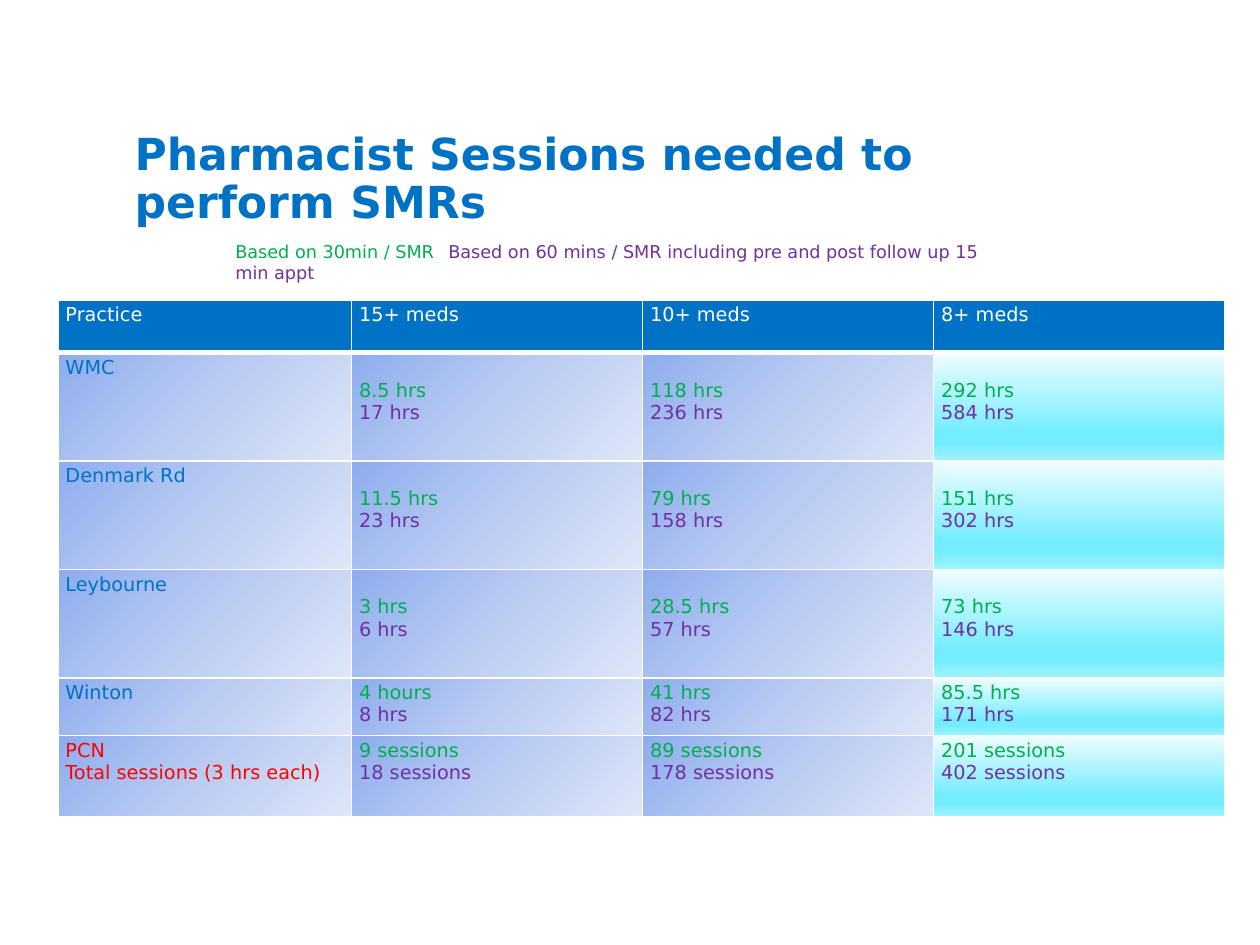
from dataclasses import dataclass

from lxml.etree import SubElement as add_element
from pptx import Presentation
from pptx.dml.color import RGBColor as Rgb
from pptx.enum.text import MSO_ANCHOR as Anchor
from pptx.oxml.ns import qn
from pptx.util import Inches, Pt

TITLE = "Pharmacist Sessions needed to perform SMRs"
HALF_HOUR_NOTE = "Based on 30min / SMR"
FULL_HOUR_NOTE = "Based on 60 mins / SMR including pre and post follow up 15 min appt"
HEADERS = ["Practice", "15+ meds", "10+ meds", "8+ meds"]
PRACTICES = [
    ("WMC", ["8.5 hrs", "17 hrs"], ["118 hrs", "236 hrs"], ["292 hrs", "584 hrs"]),
    ("Denmark Rd", ["11.5 hrs", "23 hrs"], ["79 hrs", "158 hrs"], ["151 hrs", "302 hrs"]),
    ("Leybourne", ["3 hrs", "6 hrs"], ["28.5 hrs", "57 hrs"], ["73 hrs", "146 hrs"]),
    ("Winton", ["4 hours", "8 hrs"], ["41 hrs", "82 hrs"], ["85.5 hrs", "171 hrs"]),
]
TOTAL_LABEL = ["PCN", "Total sessions (3 hrs each)"]
TOTALS = [
    ["9 sessions", "18 sessions"],
    ["89 sessions", "178 sessions"],
    ["201 sessions", "402 sessions"],
]
COLUMN_WIDTHS = [2.33, 2.31, 2.31, 2.31]
ROW_HEIGHTS = [0.42, 0.86, 0.86, 0.86, 0.46, 0.64]
TALL_ROW = 0.86


@dataclass(frozen=True)
class Theme:
    font: str = "DejaVu Sans"
    blue: str = "0072C6"
    green: str = "00B050"
    purple: str = "7030A0"
    red: str = "FF0000"
    white: str = "FFFFFF"
    title_size: float = 25.2
    note_size: float = 10.1
    cell_size: float = 11
    lavender: tuple = ((0, "8EADEE"), (50, "BBCCF2"), (100, "DEE6F8"))
    aqua: tuple = ((0, "EFFDFF"), (74, "73EDFF"), (83, "73EDFF"), (100, "A1F3FF"))


theme = Theme()


def write(para, text, color, size=theme.cell_size, bold=False):
    span = para.add_run()
    span.text = text
    span.font.name = theme.font
    span.font.size = Pt(size)
    span.font.bold = bold
    span.font.color.rgb = Rgb.from_string(color)


def add_box(page, left, top, width, height):
    frame = page.shapes.add_textbox(
        Inches(left), Inches(top), Inches(width), Inches(height)
    ).text_frame
    frame.word_wrap = True
    return frame


def add_tab_stop(para, position):
    tabs = add_element(para._p.get_or_add_pPr(), qn("a:tabLst"))
    add_element(tabs, qn("a:tab"), pos=str(Inches(position)), algn="l")


def add_color(parent, color):
    add_element(parent, qn("a:srgbClr"), val=color)


def set_borders(cell, bottom=1):
    properties = cell._tc.get_or_add_tcPr()
    for side, width in (("L", 1), ("R", 1), ("T", 1), ("B", bottom)):
        line = add_element(properties, qn(f"a:ln{side}"), w=str(Pt(width)))
        add_color(add_element(line, qn("a:solidFill")), theme.white)


def set_gradient(cell, stops, angle):
    """Call after set_borders: the fill must follow the border elements."""
    gradient = add_element(cell._tc.get_or_add_tcPr(), qn("a:gradFill"), rotWithShape="1")
    stop_list = add_element(gradient, qn("a:gsLst"))
    for percent, color in stops:
        add_color(add_element(stop_list, qn("a:gs"), pos=str(percent * 1000)), color)
    add_element(gradient, qn("a:lin"), ang=str(angle * 60000), scaled="0")


def fill_cell(cell, lines, colors, top_margin=0.03):
    cell.margin_left = cell.margin_right = Inches(0.06)
    cell.margin_top, cell.margin_bottom = Inches(top_margin), Inches(0.03)
    frame = cell.text_frame
    for index, (text, color) in enumerate(zip(lines, colors)):
        para = frame.add_paragraph() if index else frame.paragraphs[0]
        write(para, text, color)


def add_session_table(page):
    body = [([name], [theme.blue], hours) for name, *hours in PRACTICES]
    body.append((TOTAL_LABEL, [theme.red] * 2, TOTALS))
    table = page.shapes.add_table(
        len(ROW_HEIGHTS), len(COLUMN_WIDTHS), Inches(0.46), Inches(2.38),
        Inches(sum(COLUMN_WIDTHS)), Inches(sum(ROW_HEIGHTS)),
    ).table
    for column, width in zip(table.columns, COLUMN_WIDTHS):
        column.width = Inches(width)
    for row, height in zip(table.rows, ROW_HEIGHTS):
        row.height = Inches(height)

    for column, header in enumerate(HEADERS):
        cell = table.cell(0, column)
        fill_cell(cell, [header], [theme.white])
        set_borders(cell, bottom=3)
        cell.fill.solid()
        cell.fill.fore_color.rgb = Rgb.from_string(theme.blue)

    for row, (label, label_colors, values) in enumerate(body, start=1):
        value_margin = 0.21 if ROW_HEIGHTS[row] == TALL_ROW else 0.03
        fill_cell(table.cell(row, 0), label, label_colors)
        for column, lines in enumerate(values, start=1):
            fill_cell(table.cell(row, column), lines,
                      [theme.green, theme.purple], value_margin)
        for column in range(len(HEADERS)):
            cell = table.cell(row, column)
            set_borders(cell)
            if column == len(HEADERS) - 1:
                set_gradient(cell, theme.aqua, 90)
            else:
                set_gradient(cell, theme.lavender, 45)


def main():
    deck = Presentation()
    deck.slide_width, deck.slide_height = Inches(10), Inches(7.5)
    page = deck.slides.add_slide(deck.slide_layouts[6])

    title = add_box(page, 0.97, 1.23, 7.84, 0.83)
    title.vertical_anchor = Anchor.BOTTOM
    title.margin_bottom = Inches(0.25)
    title.paragraphs[0].line_spacing = 0.9
    write(title.paragraphs[0], TITLE, theme.blue, size=theme.title_size, bold=True)

    add_session_table(page)

    note = add_box(page, 1.77, 1.86, 6.1, 0.44).paragraphs[0]
    add_tab_stop(note, 1.69)
    write(note, HALF_HOUR_NOTE + "\t", theme.green, size=theme.note_size)
    write(note, FULL_HOUR_NOTE, theme.purple, size=theme.note_size)

    deck.save("out.pptx")


if __name__ == "__main__":
    main()
